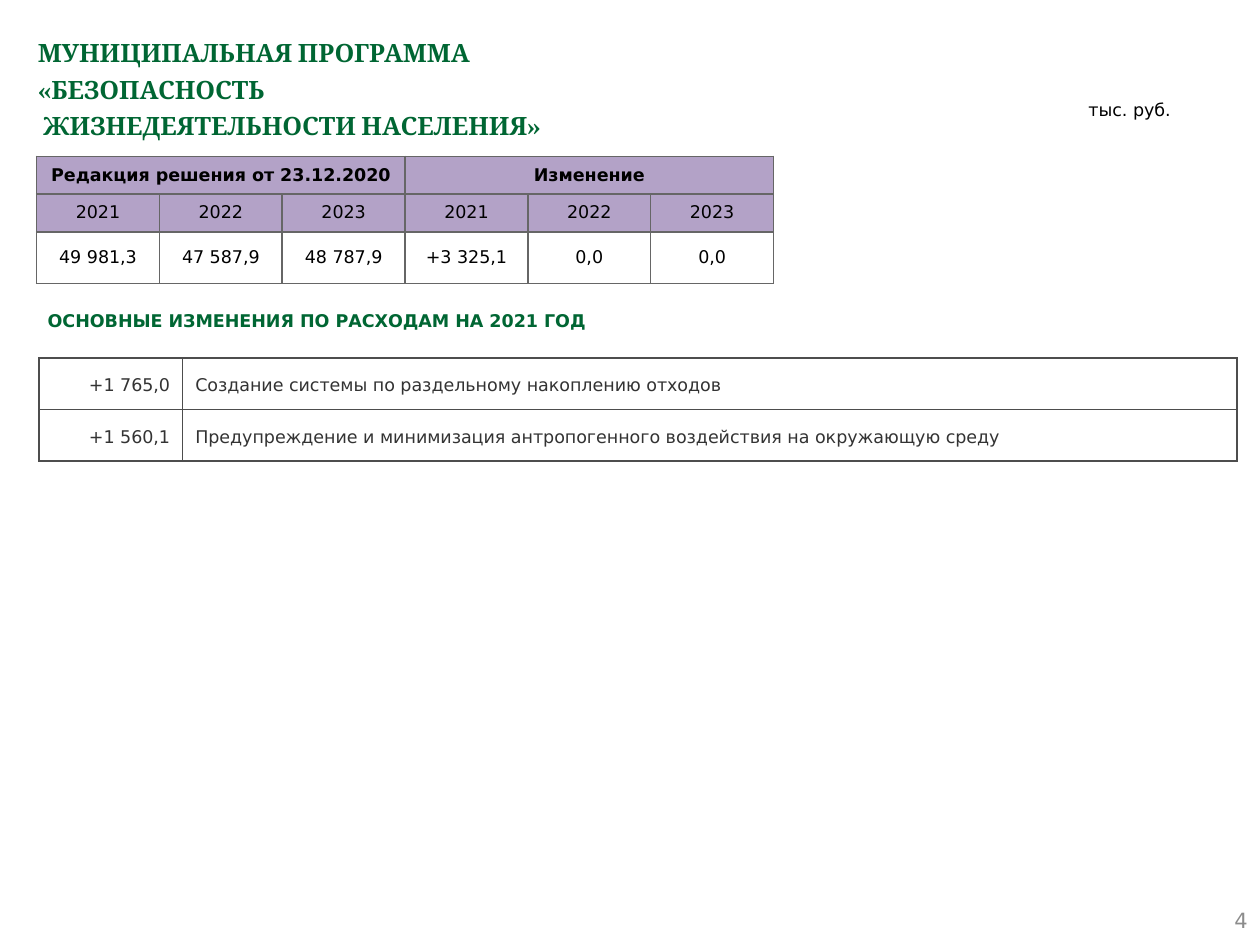
from lxml import etree
from pptx import Presentation
from pptx.dml.color import RGBColor
from pptx.enum.shapes import MSO_SHAPE
from pptx.enum.text import MSO_ANCHOR, MSO_AUTO_SIZE, PP_ALIGN
from pptx.oxml.ns import qn
from pptx.util import Inches, Pt

LEFT, CENTER, RIGHT = PP_ALIGN.LEFT, PP_ALIGN.CENTER, PP_ALIGN.RIGHT
TOP, MIDDLE = MSO_ANCHOR.TOP, MSO_ANCHOR.MIDDLE
COLORS = {"green": "006633", "black": "000000", "text": "333333", "number": "8C8C8C",
          "header": "B3A2C7", "budget_line": "666666", "change_line": "4D4D4D"}


def write(frame, text, color, size=10, font="DejaVu Sans", bold=False,
          align=LEFT, spacing=1.0):
    frame.text = text
    for para in frame.paragraphs:
        para.alignment = align
        para.line_spacing = spacing
        for span in para.runs:
            span.font.name = font
            span.font.size = Pt(size)
            span.font.bold = bold
            span.font.color.rgb = RGBColor.from_string(COLORS[color])


def style_cell(cell, line, fill=None):
    cell.vertical_anchor = MIDDLE
    properties = cell._tc.get_or_add_tcPr()
    for side in ("a:lnL", "a:lnR", "a:lnT", "a:lnB"):
        border = etree.SubElement(properties, qn(side), w=str(Pt(1)))
        solid = etree.SubElement(border, qn("a:solidFill"))
        etree.SubElement(solid, qn("a:srgbClr"), val=COLORS[line])
    if fill:
        cell.fill.solid()
        cell.fill.fore_color.rgb = RGBColor.from_string(COLORS[fill])
    else:
        cell.fill.background()


deck = Presentation()
deck.slide_width, deck.slide_height = Inches(10), Inches(7.5)
page = deck.slides.add_slide(deck.slide_layouts[5])

# Title
title = page.shapes.title
title.left, title.top = Inches(0.2), Inches(0.2)
title.width, title.height = Inches(9.61), Inches(0.79)
title.text_frame.auto_size = MSO_AUTO_SIZE.NONE
title.text_frame.vertical_anchor = TOP
write(title.text_frame,
      "МУНИЦИПАЛЬНАЯ ПРОГРАММА \v«БЕЗОПАСНОСТЬ\v ЖИЗНЕДЕЯТЕЛЬНОСТИ НАСЕЛЕНИЯ»",
      "green", size=14.4, font="Cambria", bold=True, spacing=1.2)

# Page number
number_box = page.shapes.add_textbox(Inches(7.67), Inches(7.1), Inches(2.33), Inches(0.4))
number_box.text_frame.word_wrap = True
number_box.text_frame.vertical_anchor = MIDDLE
write(number_box.text_frame, "4", "number", size=12, align=RIGHT)

# Heading of the list of changes
heading = page.shapes.add_shape(MSO_SHAPE.PENTAGON, Inches(0.28), Inches(2.33),
                                Inches(4.92), Inches(0.43))
heading.adjustments[0] = 0
heading.shadow.inherit = False
heading.fill.background()
heading.line.fill.background()
heading.text_frame.vertical_anchor = MIDDLE
write(heading.text_frame, "ОСНОВНЫЕ ИЗМЕНЕНИЯ ПО РАСХОДАМ НА 2021 ГОД", "green", bold=True)

# Table of changes
changes = [
    ("+1 765,0", "Создание системы по раздельному накоплению отходов"),
    ("+1 560,1", "Предупреждение и минимизация антропогенного воздействия на окружающую среду"),
]
change_table = page.shapes.add_table(len(changes), 2, Inches(0.31), Inches(2.84),
                                     Inches(9.51), Inches(0.82)).table
for column, width in zip(change_table.columns, (1.14, 8.37)):
    column.width = Inches(width)
for row, values in enumerate(changes):
    for col, value in enumerate(values):
        cell = change_table.cell(row, col)
        style_cell(cell, "change_line")
        write(cell.text_frame, value, "text", align=(RIGHT, LEFT)[col], spacing=1.2)

# Unit of measure
unit_box = page.shapes.add_textbox(Inches(8.54), Inches(0.7), Inches(1.01), Inches(0.3))
unit_box.text_frame.word_wrap = True
unit_box.text_frame.auto_size = MSO_AUTO_SIZE.SHAPE_TO_FIT_TEXT
write(unit_box.text_frame, "тыс. руб.", "black", spacing=1.2)

# Budget table: two merged headings over three years each
budget = [
    ("Редакция решения от 23.12.2020", "", "", "Изменение", "", ""),
    ("2021", "2022", "2023") * 2,
    ("49 981,3", "47 587,9", "48 787,9", "+3 325,1", "0,0", "0,0"),
]
budget_table = page.shapes.add_table(3, 6, Inches(0.29), Inches(1.24),
                                     Inches(5.85), Inches(1.01)).table
for row, height in zip(budget_table.rows, (0.3, 0.3, 0.41)):
    row.height = Inches(height)
for first in (0, 3):
    budget_table.cell(0, first).merge(budget_table.cell(0, first + 2))
for row, values in enumerate(budget):
    for col, value in enumerate(values):
        cell = budget_table.cell(row, col)
        cell.margin_left = cell.margin_right = Inches(0.05)
        cell.margin_top = cell.margin_bottom = Inches(0.05)
        style_cell(cell, "budget_line", "header" if row < 2 else None)
        if value:
            write(cell.text_frame, value, "black", bold=row == 0, align=CENTER)

deck.save("out.pptx")
